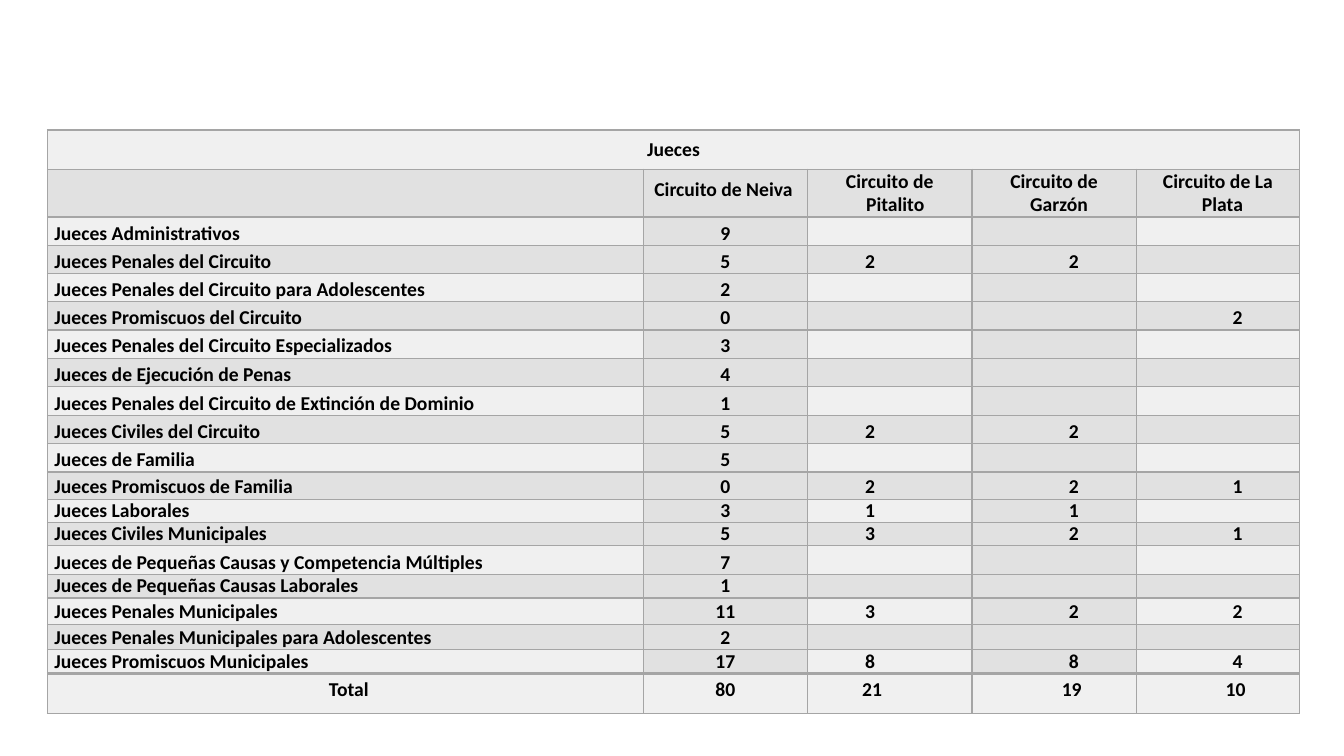
from dataclasses import dataclass

from pptx import Presentation
from pptx.dml.color import RGBColor
from pptx.enum.text import MSO_ANCHOR, PP_ALIGN
from pptx.oxml import parse_xml
from pptx.oxml.ns import nsdecls
from pptx.table import Table, _Cell
from pptx.util import Inches, Pt

LIGHT = "F0F0F0"
DARK = "E1E1E1"
BORDER = "A5A5A5"
TITLE_HEIGHT = 0.39
HEADER_HEIGHT = 0.4
COLUMN_WIDTHS = (5.91, 1.63, 1.63, 1.63, 1.62)


@dataclass(frozen=True)
class Circuit:
    name: str
    left: float
    hanging: float
    right: float
    centered: bool = True
    line_points: float | None = None


@dataclass(frozen=True)
class JudgeRow:
    label: str
    counts: tuple[str, str, str, str]
    height: float = 0.28


CIRCUITS = (
    Circuit("Circuito de Neiva", 0.26, -0.15, 0, False, 12),
    Circuit("Circuito de Pitalito", 0.23, -0.11, 0.12),
    Circuit("Circuito de Garzón", 0.22, -0.1, 0.12),
    Circuit("Circuito de La Plata", 0.2, -0.09, 0.11),
)

JUDGES = (
    JudgeRow("Jueces Administrativos", ("9", "", "", "")),
    JudgeRow("Jueces Penales del Circuito", ("5", "2", "2", "")),
    JudgeRow("Jueces Penales del Circuito para Adolescentes", ("2", "", "", "")),
    JudgeRow("Jueces Promiscuos del Circuito", ("0", "", "", "2")),
    JudgeRow("Jueces Penales del Circuito Especializados", ("3", "", "", "")),
    JudgeRow("Jueces de Ejecución de Penas", ("4", "", "", "")),
    JudgeRow("Jueces Penales del Circuito de Extinción de Dominio", ("1", "", "", ""), 0.29),
    JudgeRow("Jueces Civiles del Circuito", ("5", "2", "2", "")),
    JudgeRow("Jueces de Familia", ("5", "", "", "")),
    JudgeRow("Jueces Promiscuos de Familia", ("0", "2", "2", "1"), 0.27),
    JudgeRow("Jueces Laborales", ("3", "1", "1", ""), 0.23),
    JudgeRow("Jueces Civiles Municipales", ("5", "3", "2", "1"), 0.23),
    JudgeRow("Jueces de Pequeñas Causas y Competencia Múltiples", ("7", "", "", ""), 0.29),
    JudgeRow("Jueces de Pequeñas Causas Laborales", ("1", "", "", ""), 0.23),
    JudgeRow("Jueces Penales Municipales", ("11", "3", "2", "2"), 0.26),
    JudgeRow("Jueces Penales Municipales para Adolescentes", ("2", "", "", ""), 0.25),
    JudgeRow("Jueces Promiscuos Municipales", ("17", "8", "8", "4"), 0.24),
)
TOTAL = JudgeRow("Total", ("80", "21", "19", "10"), 0.4)


def color(value: str) -> RGBColor:
    return RGBColor.from_string(value)


def style_cell(cell: _Cell, fill: str, top_width: float = 1) -> None:
    properties = cell._tc.get_or_add_tcPr()
    for side, width in (("L", 1), ("R", 1), ("T", top_width), ("B", 1)):
        properties.append(parse_xml(
            f'<a:ln{side} {nsdecls("a")} w="{Pt(width)}"><a:solidFill>'
            f'<a:srgbClr val="{BORDER}"/></a:solidFill></a:ln{side}>'
        ))
    cell.fill.solid()
    cell.fill.fore_color.rgb = color(fill)
    cell.margin_left = cell.margin_right = cell.margin_top = cell.margin_bottom = 0


def write_text(
    cell: _Cell,
    text: str,
    *,
    anchor: MSO_ANCHOR = MSO_ANCHOR.MIDDLE,
    centered: bool = True,
    left: float = 0,
    right: float = 0,
    hanging: float = 0,
    line_points: float | None = None,
) -> None:
    cell.vertical_anchor = anchor
    paragraph = cell.text_frame.paragraphs[0]
    if not text:
        paragraph._p.get_or_add_endParaRPr().set("sz", "1000")
        return
    properties = paragraph._p.get_or_add_pPr()
    for name, length in (("marL", left), ("marR", right), ("indent", hanging)):
        properties.set(name, str(Inches(length)))
    paragraph.alignment = PP_ALIGN.CENTER if centered else PP_ALIGN.LEFT
    if line_points:
        paragraph.line_spacing = Pt(line_points)
    run = paragraph.add_run()
    run.text = text
    run.font.name = "Calibri"
    run.font.size = Pt(14)
    run.font.bold = True
    run.font.color.rgb = color("000000")


def write_judges(table: Table, row: int, judges: JudgeRow) -> None:
    is_total = judges is TOTAL
    anchor = MSO_ANCHOR.MIDDLE if is_total else MSO_ANCHOR.BOTTOM
    shift = 0.35 if is_total else 0.39
    lefts = (0.07, 0, 0, shift, shift)
    rights = (0, 0, shift, 0, 0)
    for column, text in enumerate((judges.label, *judges.counts)):
        write_text(
            table.cell(row, column), text, anchor=anchor,
            centered=is_total or column > 0,
            left=lefts[column], right=rights[column], line_points=11.2,
        )


def add_judges_table(slide) -> None:
    body = (*JUDGES, TOTAL)
    heights = (TITLE_HEIGHT, HEADER_HEIGHT, *(judges.height for judges in body))
    shape = slide.shapes.add_table(
        len(heights), len(COLUMN_WIDTHS), Inches(0.47), Inches(1.29),
        Inches(sum(COLUMN_WIDTHS)), Inches(sum(heights)),
    )
    table = shape.table
    table.first_row = table.horz_banding = False
    for column, width in zip(table.columns, COLUMN_WIDTHS):
        column.width = Inches(width)
    last_row = len(heights) - 1
    for row, height in enumerate(heights):
        table.rows[row].height = Inches(height)
        for column in range(len(COLUMN_WIDTHS)):
            dark = row % 2 == 1 or column in (1, 3)
            if row in (0, last_row):
                dark = False
            style_cell(table.cell(row, column), DARK if dark else LIGHT,
                       2 if row == last_row else 1)
    table.cell(0, 0).merge(table.cell(0, len(COLUMN_WIDTHS) - 1))
    write_text(table.cell(0, 0), "Jueces")
    write_text(table.cell(1, 0), "")
    for column, circuit in enumerate(CIRCUITS, start=1):
        write_text(
            table.cell(1, column), circuit.name, centered=circuit.centered,
            left=circuit.left, right=circuit.right, hanging=circuit.hanging,
            line_points=circuit.line_points,
        )
    for row, judges in enumerate(body, start=2):
        write_judges(table, row, judges)


def main() -> None:
    presentation = Presentation()
    presentation.slide_width = Inches(13.33)
    presentation.slide_height = Inches(7.5)
    slide = presentation.slides.add_slide(presentation.slide_layouts[6])
    add_judges_table(slide)
    presentation.save("out.pptx")


if __name__ == "__main__":
    main()
